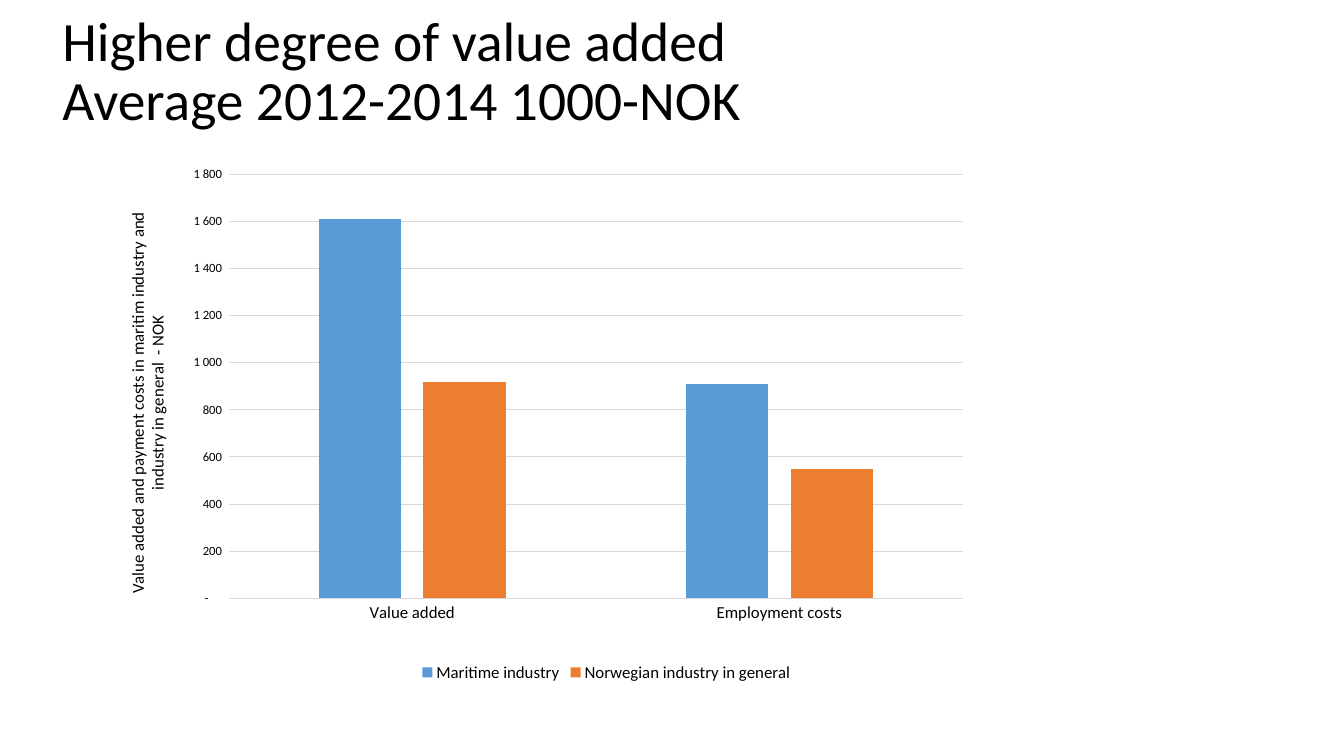
from pptx import Presentation, util as u
from pptx.chart import data as d
from pptx.dml.color import RGBColor
from pptx.enum import chart as ec, text as et
from pptx.oxml import parse_xml
from pptx.oxml.ns import nsdecls

FONT = "Calibri"
BLACK, GREY = "000000", "D9D9D9"
HEAD = "Higher degree of value added\vAverage 2012-2014 1000-NOK"
SIDE = ("Value added and payment costs in maritim industry and "
        "industry in general  - NOK")
CATS = ["Value added", "Employment costs"]
ROWS = [("Maritime industry", (1610, 910), "5B9BD5"),
        ("Norwegian industry in general", (920, 550), "ED7D31")]
NUM = '[>=1000]#" "##0_ ;[>0]0_ ;"-"??_ '
PLOT = {"x": 0.125, "y": 0.034, "w": 0.854, "h": 0.834}
NAME = {"x": 0.02, "y": 0.1}


def rgb(code):
    return RGBColor.from_string(code)


def style(font, size):
    font.name, font.size = FONT, u.Pt(size)
    font.bold = False
    font.color.rgb = rgb(BLACK)


def rule(line):
    line.color.rgb = rgb(GREY)
    line.width = u.Pt(0.75)


def layout(box, inner=False):
    target = '<c:layoutTarget val="inner"/>' if inner else ""
    modes = "".join(f'<c:{k}Mode val="edge"/>' for k in box)
    sizes = "".join(f'<c:{k} val="{v}"/>' for k, v in box.items())
    return parse_xml(f'<c:layout {nsdecls("c")}><c:manualLayout>{target}'
                     f'{modes}{sizes}</c:manualLayout></c:layout>')


def place(node, box, inner=False):
    for old in node.xpath("c:layout"):
        node.remove(old)
    spot = len(node.xpath("c:tx"))
    node.insert(spot, layout(box, inner))


def add_head(slide):
    box = slide.shapes.add_textbox(*map(u.Inches, (0.52, 0.27, 11.5, 0.91)))
    frame = box.text_frame
    frame.word_wrap = True
    frame.vertical_anchor = et.MSO_ANCHOR.MIDDLE
    para = frame.paragraphs[0]
    para.text = HEAD
    para.line_spacing = 0.9
    style(para.font, 39.6)


def add_bars(slide):
    data = d.CategoryChartData(number_format=NUM)
    data.categories = CATS
    for name, vals, _ in ROWS:
        data.add_series(name, vals)
    chart = slide.shapes.add_chart(
        ec.XL_CHART_TYPE.COLUMN_CLUSTERED,
        *map(u.Inches, (1.02, 1.55, 9.99, 5.26)), data).chart
    style(chart.font, 10)
    chart.has_title = False
    chart.has_legend = True
    chart.legend.position = ec.XL_LEGEND_POSITION.BOTTOM
    chart.legend.include_in_layout = False
    style(chart.legend.font, 12)

    plot = chart.plots[0]
    plot.gap_width, plot.overlap = 219, -27
    plot.vary_by_categories = False
    for bar, (_, _, code) in zip(plot.series, ROWS):
        bar.format.fill.solid()
        bar.format.fill.fore_color.rgb = rgb(code)

    cat, val = chart.category_axis, chart.value_axis
    for axis, size in ((cat, 12), (val, 9)):
        axis.major_tick_mark = axis.minor_tick_mark = ec.XL_TICK_MARK.NONE
        style(axis.tick_labels.font, size)
    rule(cat.format.line)
    val.format.line.fill.background()
    rule(val.major_gridlines.format.line)
    val.minimum_scale, val.maximum_scale, val.major_unit = 0, 1800, 200
    val.tick_labels.number_format = NUM
    val.tick_labels.number_format_is_linked = False
    para = val.axis_title.text_frame.paragraphs[0]
    para.text = SIDE
    style(para.font, 12)
    body = val.axis_title.text_frame._txBody.bodyPr
    body.set("rot", "-5400000")
    body.set("vert", "horz")
    place(val.axis_title._element, NAME)
    place(chart._chartSpace.chart.plotArea, PLOT, True)


def main():
    deck = Presentation()
    deck.slide_width, deck.slide_height = u.Inches(13.33), u.Inches(7.5)
    slide = deck.slides.add_slide(deck.slide_layouts[6])
    add_head(slide)
    add_bars(slide)
    deck.save("out.pptx")


if __name__ == "__main__":
    main()
